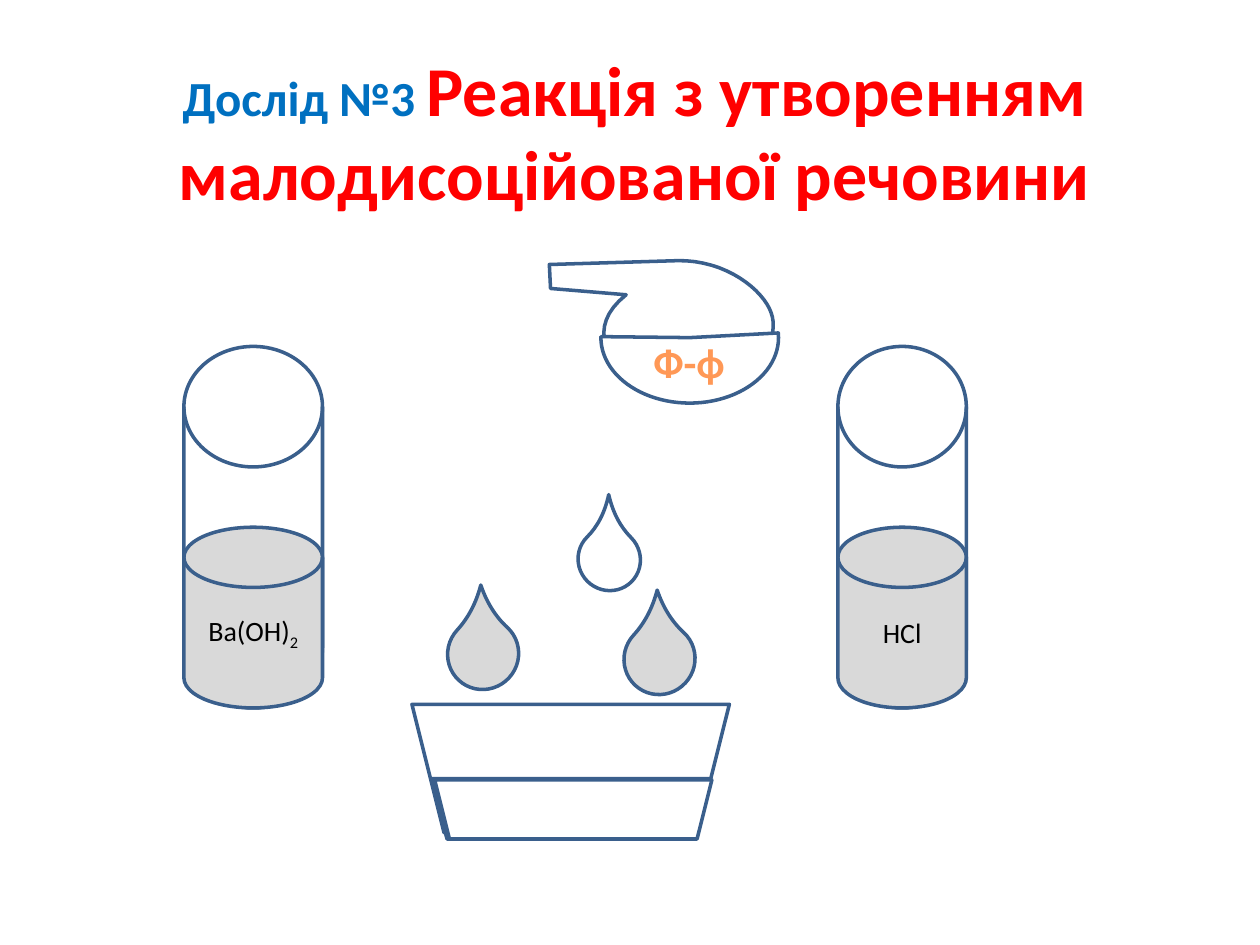
from pptx import Presentation
from pptx.dml.color import RGBColor
from pptx.enum.shapes import MSO_SHAPE
from pptx.enum.text import PP_ALIGN
from pptx.util import Pt

DISK = MSO_SHAPE.FLOWCHART_MAGNETIC_DISK
TRAP = MSO_SHAPE.TRAPEZOID
TEAR = MSO_SHAPE.TEAR
PIE = MSO_SHAPE.PIE
CENTER = PP_ALIGN.CENTER

HUES = {"line": "3A5F8C", "gray": "D9D9D9", "white": "FFFFFF", "pink": "F02C9C",
        "blue": "0070C0", "red": "FF0000", "orange": "FF9856", "black": "000000"}


def tint(name):
    return RGBColor.from_string(HUES[name])


def curve(a, b, c, d, steps=16):
    """Points along a cubic Bezier curve, without its start."""
    out = []
    for i in range(1, steps + 1):
        t = i / steps
        u = 1 - t
        out.append(tuple(u**3 * p + 3 * u * u * t * q + 3 * u * t * t * r + t**3 * s
                         for p, q, r, s in zip(a, b, c, d)))
    return out


class Board:
    face = "Calibri"
    width = 2

    def __init__(self, slide):
        self.slide = slide

    def paint(self, shape, fill):
        shape.shadow.inherit = False
        if fill:
            shape.fill.solid()
            shape.fill.fore_color.rgb = tint(fill)
        else:
            shape.fill.background()
        shape.line.color.rgb = tint("line")
        shape.line.width = Pt(self.width)

    def shape(self, kind, box, fill=None, adj=(), turn=0, flip=False):
        item = self.slide.shapes.add_shape(kind, *map(Pt, box))
        self.paint(item, fill)
        for i, value in enumerate(adj):
            item.adjustments[i] = value
        item.rotation = turn
        if flip:
            item._element.spPr.xfrm.set("flipV", "1")
        return item

    def outline(self, points, fill):
        spots = [(Pt(x), Pt(y)) for x, y in points]
        pen = self.slide.shapes.build_freeform(*spots[0])
        pen.add_line_segments(spots[1:], close=True)
        self.paint(pen.convert_to_shape(), fill)

    def letter(self, item, text, size, color, bold=False):
        """Put centred text in a shape and return its paragraph."""
        para = item.text_frame.paragraphs[0]
        para.alignment = CENTER
        font = para.font
        font.name, font.size, font.bold = self.face, Pt(size), bold
        font.color.rgb = tint(color)
        para.add_run().text = text
        return para

    def label(self, box, text, size, color, wrap=True):
        item = self.slide.shapes.add_textbox(*map(Pt, box))
        item.text_frame.word_wrap = wrap
        return self.letter(item, text, size, color, True)

    def tube(self, left, wide, text):
        """A glass tube whose lower half is filled with a named liquid."""
        top, high = 198, 206.6
        self.shape(DISK, (left, top, wide, high))
        half = high / 2
        fluid = self.shape(DISK, (left, top + half, wide, half), "gray")
        return self.letter(fluid, text, 16, "black")

    def drop(self, box, fill, adj, turn):
        self.shape(TEAR, box, fill, [adj], turn)

    def bowl(self, box, fill=None):
        self.shape(TRAP, box, fill, flip=True)


def main():
    deck = Presentation()
    deck.slide_width, deck.slide_height = Pt(720), Pt(540)
    board = Board(deck.slides.add_slide(deck.slide_layouts[6]))

    title = board.label((31, 23, 663, 104.4), "Дослід №3 ", 40, "red")
    lead = title.runs[0].font
    lead.size = Pt(28)
    lead.color.rgb = tint("blue")
    title.add_run().text = "Реакція з утворенням малодисоційованої речовини"

    base = board.tube(105.1, 79.2, "Ba(OH)")
    sub = base.add_run()
    sub.text = "2"
    sub.font._element.set("baseline", "-25000")
    board.bowl((235.4, 402.5, 181.4, 73.4))
    board.tube(478.8, 73.4, "НСl")

    for left, top in ((255.6, 353.5), (356.4, 356.4)):
        board.drop((left, top, 41, 40.3), "gray", 1.37, 312.6)

    flask = [(386.6, 149)]
    for bend in (((415.4, 148.3), (436.3, 166.3), (440.6, 178.6)),
                 ((445.7, 191.5), (434.9, 215.3), (414, 224.6)),
                 ((400.3, 231.1), (368.6, 226.8), (359.3, 217.4)),
                 ((349.9, 207.4), (333.4, 187.9), (357.8, 168.5))):
        flask += curve(flask[-1], *bend)
    flask += [(314.6, 164.9), (313.9, 151.2)]
    board.outline(flask, "white")
    board.shape(PIE, (343.4, 155.5, 101.5, 74.9), "white", (214.21, 108.37))
    board.label((361.4, 188.6, 64.8, 36), "Ф-ф", 24, "orange", wrap=False)

    board.drop((330.5, 301.7, 35.3, 36), "white", 1.47, 315.1)
    for left, top, fill in ((247, 445, "white"), (247, 445.7, "pink"),
                            (248.4, 445.7, "white")):
        board.bowl((left, top, 158.4, 33.8), fill)
    deck.save("out.pptx")


if __name__ == "__main__":
    main()
